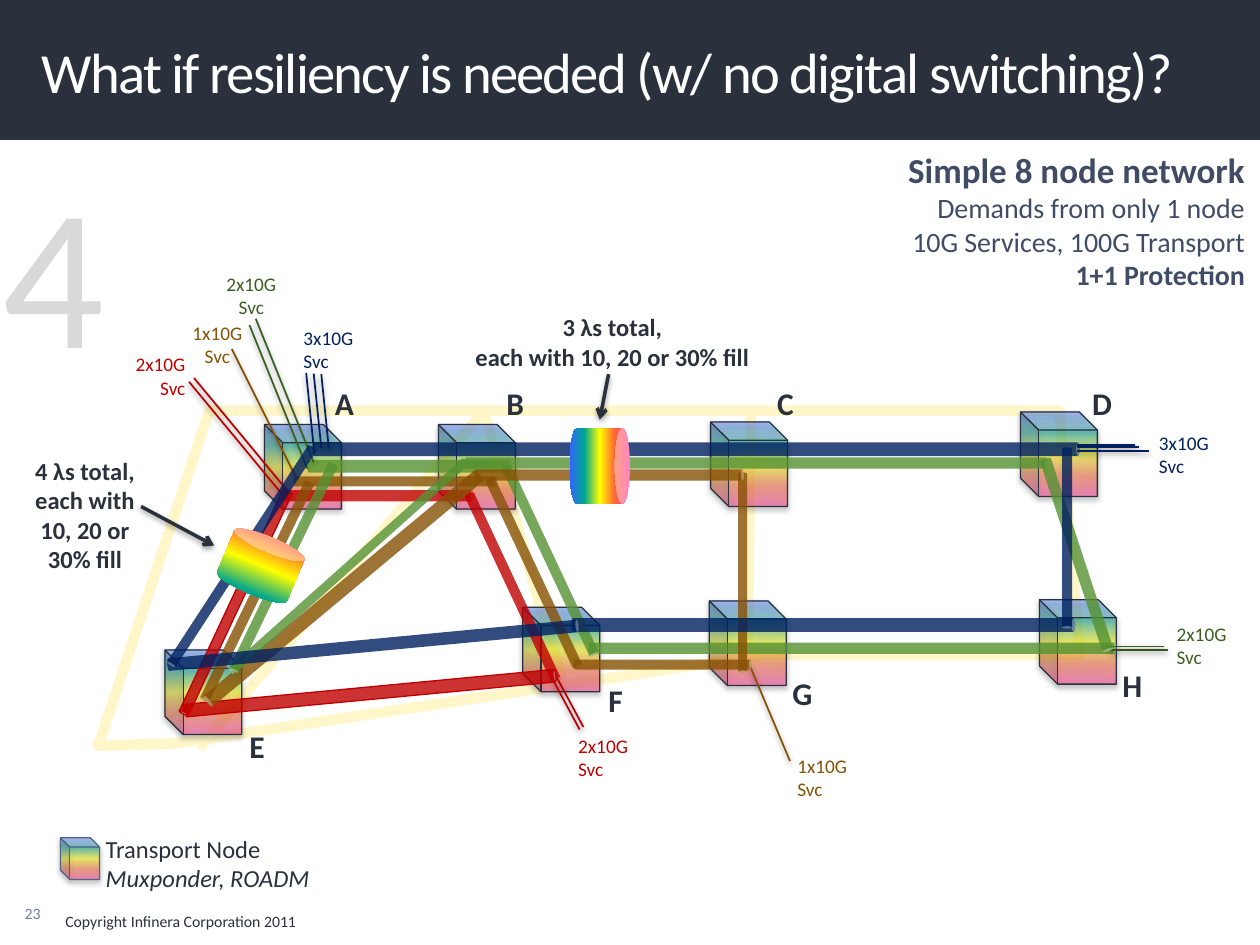
from dataclasses import dataclass
from typing import NamedTuple

import pptx
import pptx.dml.color
import pptx.enum.shapes
import pptx.enum.text
import pptx.oxml
import pptx.oxml.ns
import pptx.util

COLUMNS, ROWS = 100, 75
CELL = pptx.util.Inches(0.1)
SHAPE = pptx.enum.shapes.MSO_SHAPE
ALIGN = {"l": pptx.enum.text.PP_ALIGN.LEFT, "c": pptx.enum.text.PP_ALIGN.CENTER,
         "r": pptx.enum.text.PP_ALIGN.RIGHT}
MIDDLE = pptx.enum.text.MSO_ANCHOR.MIDDLE
FIT = pptx.enum.text.MSO_AUTO_SIZE
COLOURS = {"ink": "2A313D", "white": "FFFFFF", "number": "6E7F9B", "pale": "D9D9D9",
           "slate": "404C65", "legend": "526384", "cream": "FFF7C9", "green": "559132",
           "moss": "396021", "navy": "002060", "red": "C00000", "brown": "865104"}
RAINBOW = ["FF3399", "FF6633", "FFFF00", "01A78F", "3366FF"]
STYLES = {
    "title": ("white", {"size": 32.4}),
    "number": ("number", {"size": 9}),
    "copyright": ("ink", {"size": 9}),
    "step": ("pale", {"size": 115}),
    "note": ("ink", {"size": 14, "bold": True}),
    "heading": ("slate", {"size": 20, "bold": True}),
    "detail": ("slate", {"size": 16}),
    "strong": ("slate", {"size": 16, "bold": True}),
    "node": ("ink", {"size": 18, "bold": True}),
    "legend": ("ink", {"size": 14}),
    "legend_italic": ("ink", {"size": 14, "italic": True}),
    **{name: (name, {"size": 11}) for name in ("moss", "navy", "red", "brown")},
}


class Span(NamedTuple):
    text: str
    style: str


@dataclass
class Label:
    left: float
    top: float
    width: float
    height: float
    paragraphs: list
    align: str = "l"
    wrap: bool = True
    grow: bool = True
    indent: float = 0


class Pipe(NamedTuple):
    left: float
    top: float
    width: float
    height: float
    rotation: float
    flip: str
    colour: str
    outlined: bool = False


class Bundle(NamedTuple):
    """Parallel lines, each moved by (step_x, step_y) from the one before."""
    begin: tuple
    end: tuple
    colour: str
    count: int = 1
    step_x: float = 0
    step_y: float = 0


class Node(NamedTuple):
    name: str
    left: float
    top: float
    name_left: float
    name_top: float
    name_width: float


NODES = [Node("A", 21, 33.7, 25.6, 30, 3.5), Node("B", 34.8, 33.7, 39.2, 30, 3.4),
         Node("E", 13.1, 51.6, 18.8, 57.2, 3.2), Node("F", 41.5, 48.2, 47.3, 53.6, 3.2),
         Node("G", 56.3, 47.7, 61.9, 53, 3.6), Node("H", 82.5, 47.6, 88.1, 52.4, 3.6),
         Node("D", 81, 32.7, 85.7, 30, 3.6), Node("C", 56.4, 33.5, 60.7, 30, 3.4)]
FIBRE_RING = [(14, 59), (60.5, 52), (85.7, 52), (84.1, 32.6), (16.6, 32.6), (7.8, 59.2)]
FIBRE_SPANS = [((38.4, 32.6), (15.8, 59.4)), ((59.6, 32.6), (59.3, 52.4)),
               ((38.4, 32.6), (44.6, 54))]
LOWER_PIPES = [
    Pipe(32, 28.9, 1, 16.2, 90, "h", "green"), Pipe(54.7, 5.2, 1.1, 60.9, 90, "h", "navy"),
    Pipe(29.6, 31.8, 0.9, 15.1, 90, "h", "red"), Pipe(40.3, 38.4, 0.8, 16.4, 334.9, "hv", "red"),
    Pipe(67.2, 30.5, 0.9, 41.9, 90, "h", "green"),
    Pipe(43.3, 36.2, 0.8, 16.6, 334.9, "hv", "green")]
UPPER_PIPES = [
    Pipe(31, 30.1, 0.8, 16.2, 90, "h", "brown"),
    Pipe(42, 37.2, 0.8, 16.6, 334.9, "hv", "brown"),
    Pipe(52.2, 45.7, 0.8, 14.1, 90, "h", "brown"),
    Pipe(28.9, 40.2, 1, 29.6, 84.6, "h", "red", True),
    Pipe(18.3, 38, 0.8, 19.6, 25.1, "v", "red", True),
    Pipe(58.6, 37.5, 0.7, 15.9, 0, "hv", "brown"),
    Pipe(47.9, 27, 0.9, 21.4, 90, "h", "brown"),
    Pipe(20, 37.3, 0.8, 19.3, 25.8, "hv", "brown"),
    Pipe(26.7, 32.6, 1.1, 28.2, 50.2, "hv", "brown"),
    Pipe(27.3, 32.4, 0.7, 25.1, 48.2, "hv", "green"),
    Pipe(22.1, 35.9, 0.8, 18.3, 25.8, "hv", "green"),
    Pipe(59.6, 13.6, 0.9, 46.3, 90, "h", "green"),
    Pipe(85, 36, 0.9, 16.1, 341.8, "hv", "green"),
    Pipe(64.8, 29.6, 1.1, 40, 90, "h", "navy"),
    Pipe(29.1, 34.8, 1, 32.8, 84.6, "h", "navy"),
    Pipe(84.3, 35.5, 0.8, 14.4, 0, "hv", "navy"),
    Pipe(18.8, 33.8, 0.8, 20.7, 33.1, "v", "navy")]
LINK_DRUMS = [Pipe(44.6, 34.6, 6, 4.8, 90, "h", "rainbow"),
              Pipe(17.7, 42.5, 6, 4.8, 22.7, "h", "rainbow")]
SERVICE_LINES = [
    Bundle((24.4, 37.2), (19.8, 25.8), "moss", 2, 0.5, -0.5),
    Bundle((92.7, 51.6), (88.1, 51.6), "moss", 2, -0.3, -0.3),
    Bundle((24.9, 35.5), (24.3, 29.6), "navy", 3, 0.6, 0.05),
    Bundle((23.1, 39.3), (15.4, 30), "red", 2, -0.4, 0.3),
    Bundle((46.3, 57.7), (44.1, 53.6), "red", 2, -0.3, 0.2),
    Bundle((90.1, 35.3), (85.5, 35.3), "navy"), Bundle((90.4, 35.5), (85.5, 35.5), "navy"),
    Bundle((91.2, 35.8), (85.5, 35.8), "navy"),
    Bundle((62.7, 60.4), (59.5, 52.8), "brown"), Bundle((23.6, 38.1), (18.4, 27.7), "brown")]
SERVICES = [(16.6, 21.1, 2, "moss", "c"), (23.1, 25.4, 3, "navy", "l"),
            (9, 27.5, 2, "red", "r"), (92.4, 48.9, 2, "moss", "l"),
            (44.9, 57.8, 2, "red", "l"), (91, 33.7, 3, "navy", "l"),
            (13.9, 25, 1, "brown", "c"), (62.3, 59.4, 1, "brown", "l")]
ARROWS = [((48.3, 29.7), (47.6, 33.3)), ((11.2, 40.2), (17, 43.3))]


def fill_note(count: int) -> list:
    return [[Span(f"{count} λs total,", "note")],
            [Span("each with 10, 20 or 30% fill", "note")]]


LABELS = [
    Label(4.2, 71.9, 45.7, 3, [[Span("Copyright Infinera Corporation 2011", "copyright")]], grow=False),
    Label(-0.8, 11.2, 10.2, 20.4, [[Span("4", "step")]], wrap=False),
    *[Label(left, top, 6.7, 4.7, [[Span(f"{count}x10G Svc", colour)]], align)
      for left, top, count, colour, align in SERVICES],
    Label(35.7, 24.3, 25.8, 5.7, fill_note(3), "c"),
    Label(1.1, 35.7, 11.3, 10.4, fill_note(4), "c"),
    Label(69.6, 11.3, 30.2, 12.2,
          [[Span("Simple 8 node network", "heading")], [Span("Demands from only 1 node", "detail")],
           [Span("10G Services, 100G Transport ", "detail"), Span("1+1 Protection", "strong")]],
          "r", grow=False, indent=0.6),
    *[Label(node.name_left, node.name_top, node.name_width, 4, [[Span(node.name, "node")]], wrap=False)
      for node in NODES],
    Label(7.4, 65.7, 18.5, 5.7, [[Span("Transport Node", "legend")],
                                 [Span("Muxponder, ROADM", "legend_italic")]], wrap=False)]


def cells(*values: float) -> list[int]:
    return [round(value * CELL) for value in values]


def rgb(name: str) -> pptx.dml.color.RGBColor:
    return pptx.dml.color.RGBColor.from_string(COLOURS[name])


def add_xml(parent, tag: str, **attributes):
    child = pptx.oxml.ns.qn(f"a:{tag}")
    element = parent.makeelement(child, {key: str(value) for key, value in attributes.items()})
    parent.append(element)
    return element


def add_soft_shadow(effects) -> None:
    shadow = add_xml(effects, "outerShdw", blurRad=40000, dist=20000, dir=5400000, rotWithShape=0)
    add_xml(add_xml(shadow, "srgbClr", val="000000"), "alpha", val=38000)


def fill_rainbow(shape, degrees: int, opacity: int) -> None:
    shape.fill.gradient()
    gradient = shape.element.spPr.find(pptx.oxml.ns.qn("a:gradFill"))
    for child in list(gradient):
        gradient.remove(child)
    stops = add_xml(gradient, "gsLst")
    for index, colour in enumerate(RAINBOW):
        tint = add_xml(add_xml(stops, "gs", pos=index * 25000), "srgbClr", val=colour)
        if opacity < 100:
            add_xml(tint, "alpha", val=opacity * 1000)
    add_xml(gradient, "lin", ang=degrees * 60000, scaled=0)


def add_span(para, span: Span):
    run = para.add_run()
    run.text = span.text
    colour, formats = STYLES[span.style]
    for name, value in {"name": "Calibri", **formats}.items():
        setattr(run.font, name, pptx.util.Pt(value) if name == "size" else value)
    run.font.color.rgb = rgb(colour)
    return run


def add_label(page, label: Label):
    box = page.shapes.add_textbox(*cells(label.left, label.top, label.width, label.height))
    frame = box.text_frame
    frame.word_wrap = label.wrap
    frame.auto_size = FIT.SHAPE_TO_FIT_TEXT if label.grow else FIT.NONE
    for index, spans in enumerate(label.paragraphs):
        para = frame.add_paragraph() if index else frame.paragraphs[0]
        para.alignment = ALIGN[label.align]
        if label.indent:
            properties = para._p.get_or_add_pPr()
            properties.set("marL", str(cells(label.indent)[0]))
            properties.set("indent", "0")
        for span in spans:
            add_span(para, span)
    return box


def add_line(shapes, begin: tuple, end: tuple, colour: str, weight: float,
             shadow: bool = True, arrow: bool = False) -> None:
    line = shapes.add_connector(pptx.enum.shapes.MSO_CONNECTOR.STRAIGHT, *cells(*begin, *end))
    line.line.color.rgb = rgb(colour)
    line.line.width = pptx.util.Pt(weight)
    if arrow:
        add_xml(line.line._get_or_add_ln(), "tailEnd", type="arrow")
    effects = add_xml(line.element.spPr, "effectLst")
    if shadow:
        add_soft_shadow(effects)


def add_bundle(page, bundle: Bundle) -> None:
    for index in range(bundle.count):
        begin, end = [(x + index * bundle.step_x, y + index * bundle.step_y)
                      for x, y in (bundle.begin, bundle.end)]
        add_line(page.shapes, begin, end, bundle.colour, 1)


def add_cube(page, left: float, top: float, width: float, height: float, outline: str) -> None:
    cube = page.shapes.add_shape(SHAPE.CUBE, *cells(left, top, width, height))
    cube.adjustments[0] = 0.236
    cube.element.spPr.xfrm.set("flipH", "1")
    fill_rainbow(cube, 270, 50)
    cube.line.color.rgb = rgb(outline)
    cube.line.width = pptx.util.Pt(0.75)
    cube.shadow.inherit = False
    add_soft_shadow(cube.element.spPr.find(pptx.oxml.ns.qn("a:effectLst")))


def add_pipe(page, pipe: Pipe) -> None:
    can = page.shapes.add_shape(SHAPE.CAN, *cells(pipe.left, pipe.top, pipe.width, pipe.height))
    can.rotation = pipe.rotation
    for axis in pipe.flip:
        can.element.spPr.xfrm.set(f"flip{axis.upper()}", "1")
    if pipe.colour == "rainbow":
        fill_rainbow(can, 90, 100)
    else:
        can.fill.solid()
        can.fill.fore_color.rgb = rgb(pipe.colour)
        tint = can.element.spPr.find(".//" + pptx.oxml.ns.qn("a:srgbClr"))
        add_xml(tint, "alpha", val=80000)
    if pipe.outlined:
        can.line.color.rgb = rgb(pipe.colour)
        can.line.width = pptx.util.Pt(0.75)
    else:
        can.line.fill.background()
    can.shadow.inherit = False


def add_header(page) -> None:
    band = page.shapes.add_shape(SHAPE.RECTANGLE, *cells(0, 0, COLUMNS, 11.1))
    band.fill.solid()
    band.fill.fore_color.rgb = rgb("ink")
    band.line.fill.background()
    band.shadow.inherit = False
    title = page.shapes.title
    title.element.addprevious(band.element)
    title.left, title.top, title.width, title.height = cells(3.3, 0.7, 96.7, 10.2)
    frame = title.text_frame
    for name, value in {"margin_left": 0, "vertical_anchor": MIDDLE, "word_wrap": True,
                        "auto_size": FIT.NONE}.items():
        setattr(frame, name, value)
    para = frame.paragraphs[0]
    para.alignment = ALIGN["l"]
    para.line_spacing = pptx.util.Pt(36)
    span = add_span(para, Span("What if resiliency is needed (w/ no digital switching)?", "title"))
    span.font._element.set("spc", "-100")


def add_fibre_map(page) -> None:
    group = page.shapes.add_group_shape()
    start, *others = [tuple(cells(*point)) for point in FIBRE_RING]
    builder = group.shapes.build_freeform(*start)
    builder.add_line_segments(others, close=True)
    ring = builder.convert_to_shape()
    ring.fill.background()
    ring.line.color.rgb = rgb("cream")
    ring.line.width = pptx.util.Pt(6)
    ring.shadow.inherit = False
    for begin, end in FIBRE_SPANS:
        add_line(group.shapes, begin, end, "cream", 6, shadow=False)


def main() -> None:
    deck = pptx.Presentation()
    deck.slide_width, deck.slide_height = cells(COLUMNS, ROWS)
    page = deck.slides.add_slide(deck.slide_layouts[5])
    add_header(page)
    number = add_label(page, Label(0, 71.2, 4.2, 2.5, [[Span("23", "number")]], "r", grow=False))
    number.text_frame.vertical_anchor = MIDDLE
    add_fibre_map(page)
    for node in NODES:
        add_cube(page, node.left, node.top, 6.1, 6.7, "ink")
    for pipe in LOWER_PIPES:
        add_pipe(page, pipe)
    for bundle in SERVICE_LINES:
        add_bundle(page, bundle)
    for pipe in UPPER_PIPES + LINK_DRUMS:
        add_pipe(page, pipe)
    for begin, end in ARROWS:
        add_line(page.shapes, begin, end, "ink", 2, arrow=True)
    add_cube(page, 4.8, 66.5, 3.1, 3.3, "legend")
    for label in LABELS:
        add_label(page, label)
    deck.save("out.pptx")


if __name__ == "__main__":
    main()
